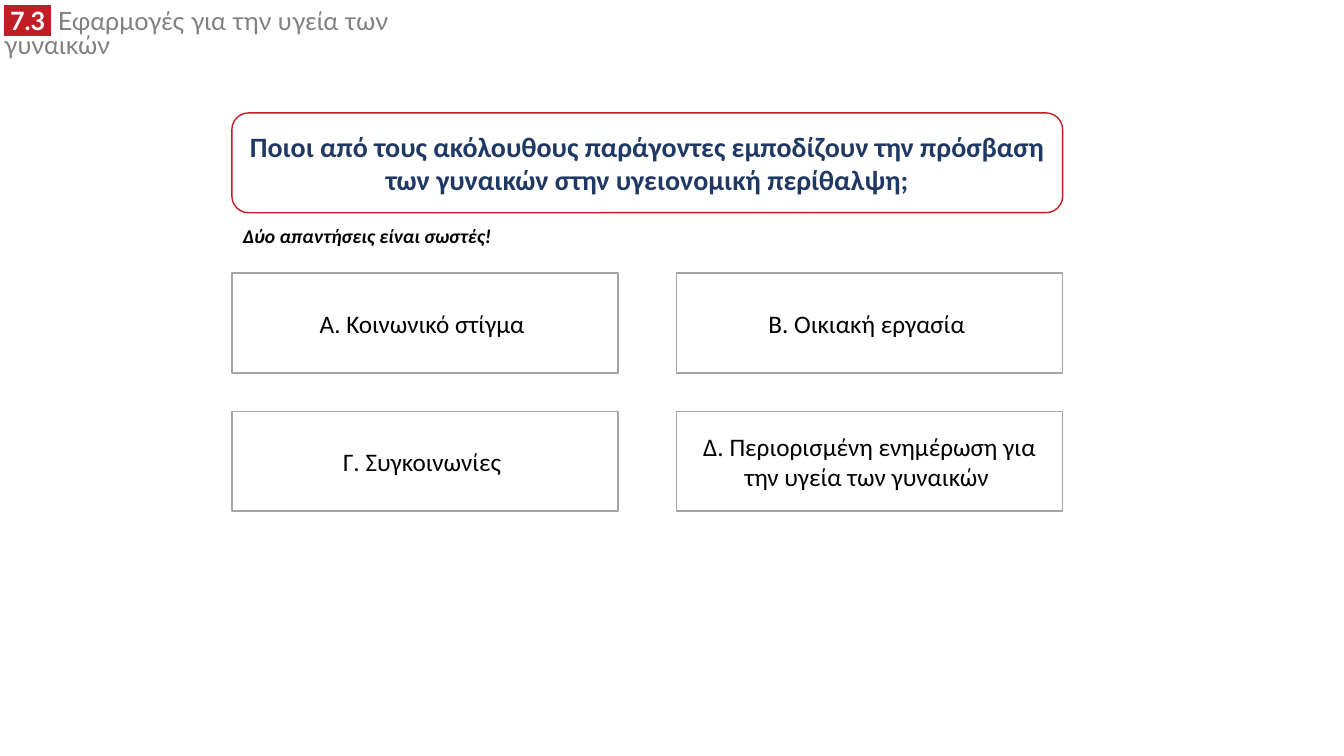
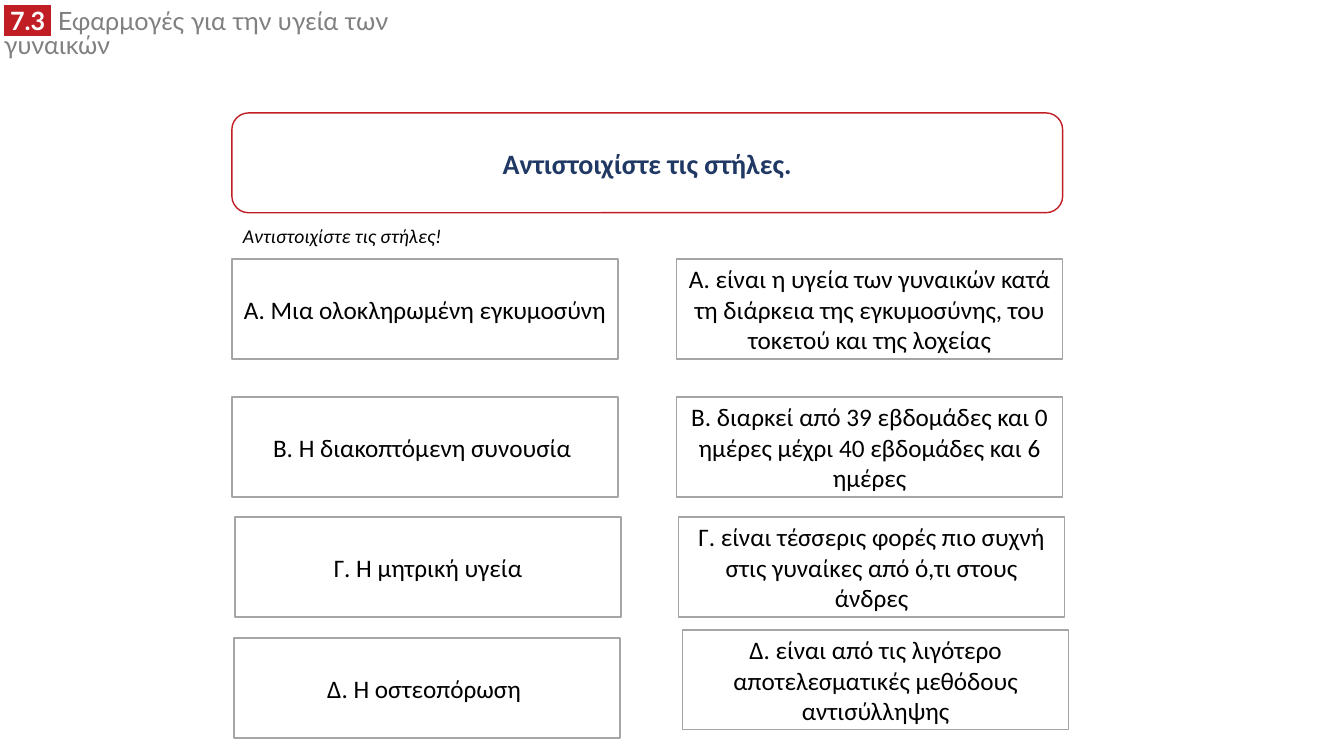
from lxml import etree
from pptx import Presentation
from pptx.dml.color import RGBColor
from pptx.enum.shapes import MSO_SHAPE as Shape
from pptx.enum.text import MSO_ANCHOR as Anchor, MSO_AUTO_SIZE as AutoSize, PP_ALIGN as Align
from pptx.oxml.ns import qn
from pptx.util import Inches, Pt

COLOURS = {
    "white": "FFFFFF", "red": "C01E24", "grey": "808080",
    "navy": "203864", "border": "A5A5A5", "black": "000000",
}

# Grid, in inches
COLUMN_LEFT = 2.3
COLUMN_STEP = 4.41
COLUMN_WIDTH = 3.83
GRID_WIDTH = COLUMN_STEP + COLUMN_WIDTH
BOX_HEIGHT = 0.99
ROW_STEP = 1.37


def colour(name):
    return RGBColor.from_string(COLOURS[name])


def style(span, size, ink, face="Calibri", bold=False, italic=False):
    font = span.font
    font.name, font.size = face, Pt(size)
    font.bold, font.italic = bold, italic
    font.color.rgb = colour(ink)


def highlight(span, name):
    """Put a marker colour behind a run, right after its fill."""
    mark = etree.Element(qn("a:highlight"))
    etree.SubElement(mark, qn("a:srgbClr"), val=COLOURS[name])
    span.font._element.find(qn("a:solidFill")).addnext(mark)


def add_text(page, left, top, width, height, wrap):
    box = page.shapes.add_textbox(*map(Inches, (left, top, width, height)))
    box.text_frame.word_wrap = wrap
    box.text_frame.auto_size = AutoSize.SHAPE_TO_FIT_TEXT
    return box.text_frame.paragraphs[0]


def add_box(page, kind, left, top, width, label, line, size, ink, bold=False):
    box = page.shapes.add_shape(kind, *map(Inches, (left, top, width, BOX_HEIGHT)))
    box.shadow.inherit = False
    box.fill.solid()
    box.fill.fore_color.rgb = colour("white")
    box.line.color.rgb = colour(line)
    box.line.width = Pt(1)
    frame = box.text_frame
    frame.word_wrap = True
    frame.vertical_anchor = Anchor.MIDDLE
    frame.text = label
    para = frame.paragraphs[0]
    para.alignment = Align.CENTER
    style(para.runs[0], size, ink, bold=bold)


def add_header(page):
    para = add_text(page, -0.06, 0.06, 5.01, 0.35, wrap=True)
    para.line_spacing = 0.8
    number, title = para.add_run(), para.add_run()
    number.text = " 7.3 "
    style(number, 18, "white", "Lato", bold=True)
    highlight(number, "red")
    title.text = " Εφαρμογές για την υγεία των γυναικών"
    style(title, 18, "grey", "Lato")


def add_question(page, question, hint, hint_width, hint_bold):
    add_box(page, Shape.ROUNDED_RECTANGLE, COLUMN_LEFT, 1.12, GRID_WIDTH,
            question, "red", 20, "navy", bold=True)
    para = add_text(page, 2.31, 2.17, hint_width, 0.34, wrap=False)
    para.text = hint
    style(para.runs[0], 14, "black", bold=hint_bold, italic=True)


def add_answer(page, column, top, label, shift=0):
    add_box(page, Shape.RECTANGLE, COLUMN_LEFT + column * COLUMN_STEP + shift, top,
            COLUMN_WIDTH, label, "border", 18, "black")


def add_answer_grid(page, top, rows):
    for row, labels in enumerate(rows):
        for column, label in enumerate(labels):
            add_answer(page, column, top + row * ROW_STEP, label)


def new_page(deck):
    page = deck.slides.add_slide(deck.slide_layouts[6])
    add_header(page)
    return page


def main():
    deck = Presentation()
    deck.slide_width, deck.slide_height = Inches(13.33), Inches(7.5)

    # Multiple choice
    page = new_page(deck)
    add_question(page, "Ποιοι από τους ακόλουθους παράγοντες εμποδίζουν την πρόσβαση "
                 "των γυναικών στην υγειονομική περίθαλψη;",
                 "Δύο απαντήσεις είναι σωστές!", 2.68, hint_bold=True)
    add_answer_grid(page, 2.71, [
        ("Α. Κοινωνικό στίγμα ", "Β. Οικιακή εργασία "),
        ("Γ. Συγκοινωνίες ", "Δ. Περιορισμένη ενημέρωση για την υγεία των γυναικών "),
    ])

    # Matching columns
    page = new_page(deck)
    add_question(page, "Αντιστοιχίστε τις στήλες.",
                 "Αντιστοιχίστε τις στήλες!", 2.23, hint_bold=False)
    add_answer_grid(page, 2.57, [
        ("Α. Μια ολοκληρωμένη εγκυμοσύνη",
         "Α. είναι η υγεία των γυναικών κατά τη διάρκεια της εγκυμοσύνης, "
         "του τοκετού και της λοχείας"),
        ("Β. Η διακοπτόμενη συνουσία ",
         "Β. διαρκεί από 39 εβδομάδες και 0 ημέρες μέχρι 40 εβδομάδες και 6 ημέρες"),
    ])
    # The last two rows sit closer together and slightly to the right
    add_answer(page, 0, 5.13, "Γ. Η μητρική υγεία", shift=0.03)
    add_answer(page, 1, 5.13, "Γ. είναι τέσσερις φορές πιο συχνή στις γυναίκες "
               "από ό,τι στους άνδρες", shift=0.02)
    add_answer(page, 0, 6.33, "Δ. Η οστεοπόρωση ", shift=0.02)
    add_answer(page, 1, 6.25, "Δ. είναι από τις λιγότερο αποτελεσματικές μεθόδους "
               "αντισύλληψης", shift=0.06)

    deck.save("out.pptx")


if __name__ == "__main__":
    main()
